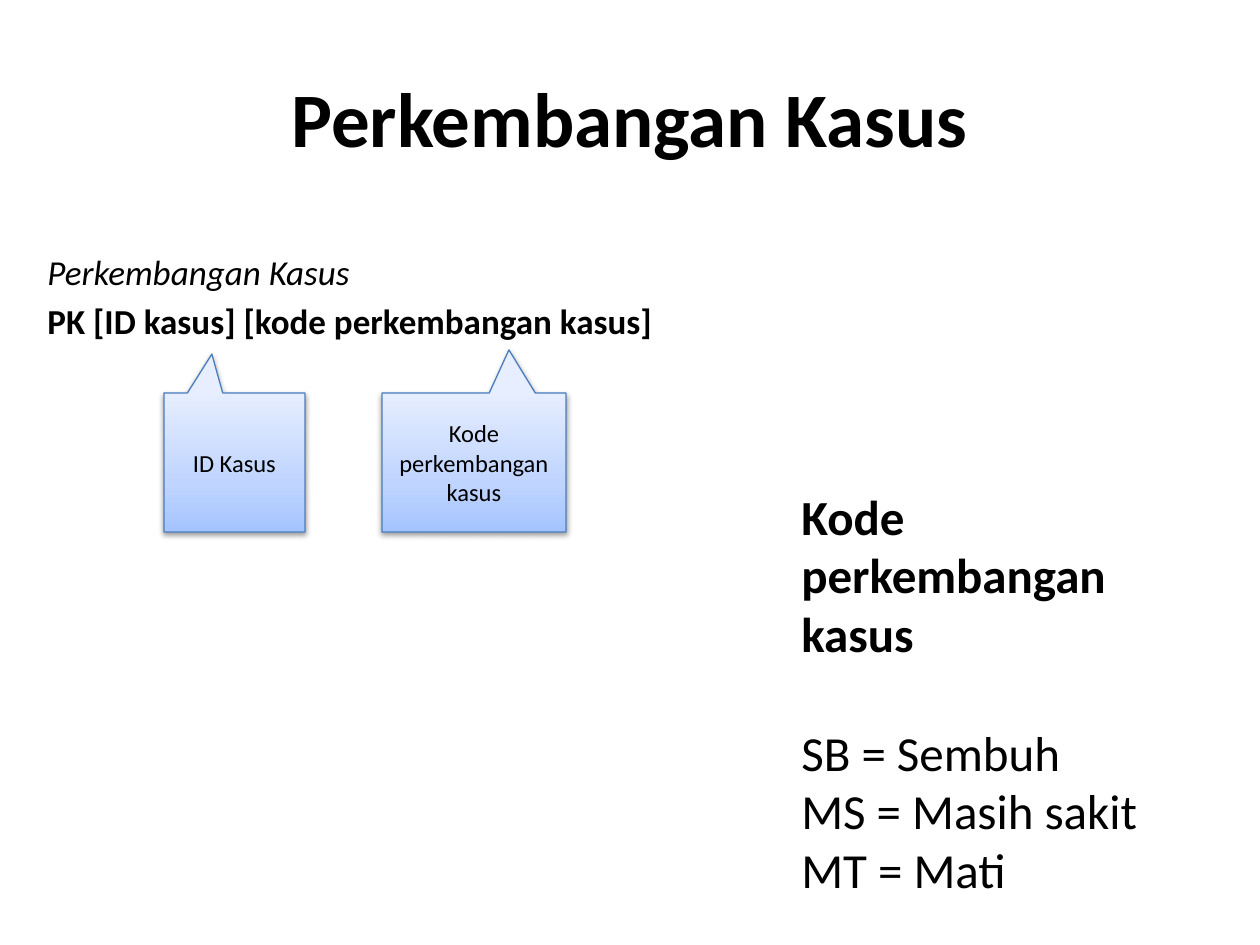
from copy import deepcopy
from pptx import Presentation
from pptx.dml.color import RGBColor
from pptx.enum.shapes import MSO_SHAPE
from pptx.enum.text import MSO_ANCHOR, PP_ALIGN
from pptx.oxml import parse_xml
from pptx.oxml.ns import nsdecls, qn
from pptx.util import Pt

PX = 914400 // 126
BLACK = RGBColor(0x00, 0x00, 0x00)
OUTLINE = RGBColor(0x4B, 0x7E, 0xBC)
GRADIENT = [
    (0, RGBColor(0xA4, 0xC4, 0xFF)),
    (0.35, RGBColor(0xBF, 0xD4, 0xFF)),
    (1, RGBColor(0xE6, 0xEE, 0xFF)),
]
SHADOW = (
    f'<a:outerShdw {nsdecls("a")} blurRad="40000" dist="20000" dir="5400000" rotWithShape="0">'
    '<a:srgbClr val="000000"><a:alpha val="38000"/></a:srgbClr></a:outerShdw>'
)


def write_paragraph(paragraph, text, size, bold=False, italic=False, align=PP_ALIGN.LEFT, before=0):
    paragraph.text = text
    paragraph.alignment = align
    paragraph.space_before = Pt(before)
    font = paragraph.font
    font.name = "Calibri"
    font.size = Pt(size)
    font.bold = bold
    font.italic = italic
    font.color.rgb = BLACK


def add_text(left, top, width, height):
    box = slide.shapes.add_textbox(left * PX, top * PX, width * PX, height * PX)
    box.text_frame.word_wrap = True
    return box.text_frame


presentation = Presentation()
presentation.slide_width = 1260 * PX
presentation.slide_height = 945 * PX
slide = presentation.slides.add_slide(presentation.slide_layouts[6])

message_format = add_text(35, 244, 1191, 600)
write_paragraph(message_format.paragraphs[0], "Perkembangan Kasus", 20, italic=True, before=4)
write_paragraph(message_format.add_paragraph(), "PK [ID kasus] [kode perkembangan kasus]", 20, bold=True, before=4)

callouts = [
    ("ID Kasus", 164, 141, (-0.16, -0.78)),
    ("Kode perkembangan kasus", 382, 184, (0.19, -0.81)),
]
for text, left, width, pointer in callouts:
    callout = slide.shapes.add_shape(
        MSO_SHAPE.RECTANGULAR_CALLOUT, left * PX, 393 * PX, width * PX, 139 * PX
    )
    callout.adjustments[0], callout.adjustments[1] = pointer
    callout.fill.gradient()
    callout.fill.gradient_angle = 90
    properties = callout._element.spPr
    stop_list = properties.find(".//" + qn("a:gsLst"))
    stop_list.insert(1, deepcopy(stop_list[0]))
    for stop, (position, color) in zip(callout.fill.gradient_stops, GRADIENT):
        stop.position = position
        stop.color.rgb = color
    callout.line.color.rgb = OUTLINE
    callout.line.width = Pt(0.75)
    callout.shadow.inherit = False
    properties.find(qn("a:effectLst")).append(parse_xml(SHADOW))
    callout.text_frame.word_wrap = True
    callout.text_frame.vertical_anchor = MSO_ANCHOR.MIDDLE
    write_paragraph(callout.text_frame.paragraphs[0], text, 14, align=PP_ALIGN.CENTER)

title = add_text(63, 38, 1134, 158)
title.vertical_anchor = MSO_ANCHOR.MIDDLE
write_paragraph(title.paragraphs[0], "Perkembangan Kasus", 44, bold=True, align=PP_ALIGN.CENTER)

codes = add_text(789, 480, 417, 466)
write_paragraph(codes.paragraphs[0], "Kode perkembangan kasus", 28, bold=True)
for text, before in [("SB = Sembuh", 34), ("MS = Masih sakit", 0), ("MT = Mati", 0)]:
    write_paragraph(codes.add_paragraph(), text, 28, before=before)

presentation.save("out.pptx")
